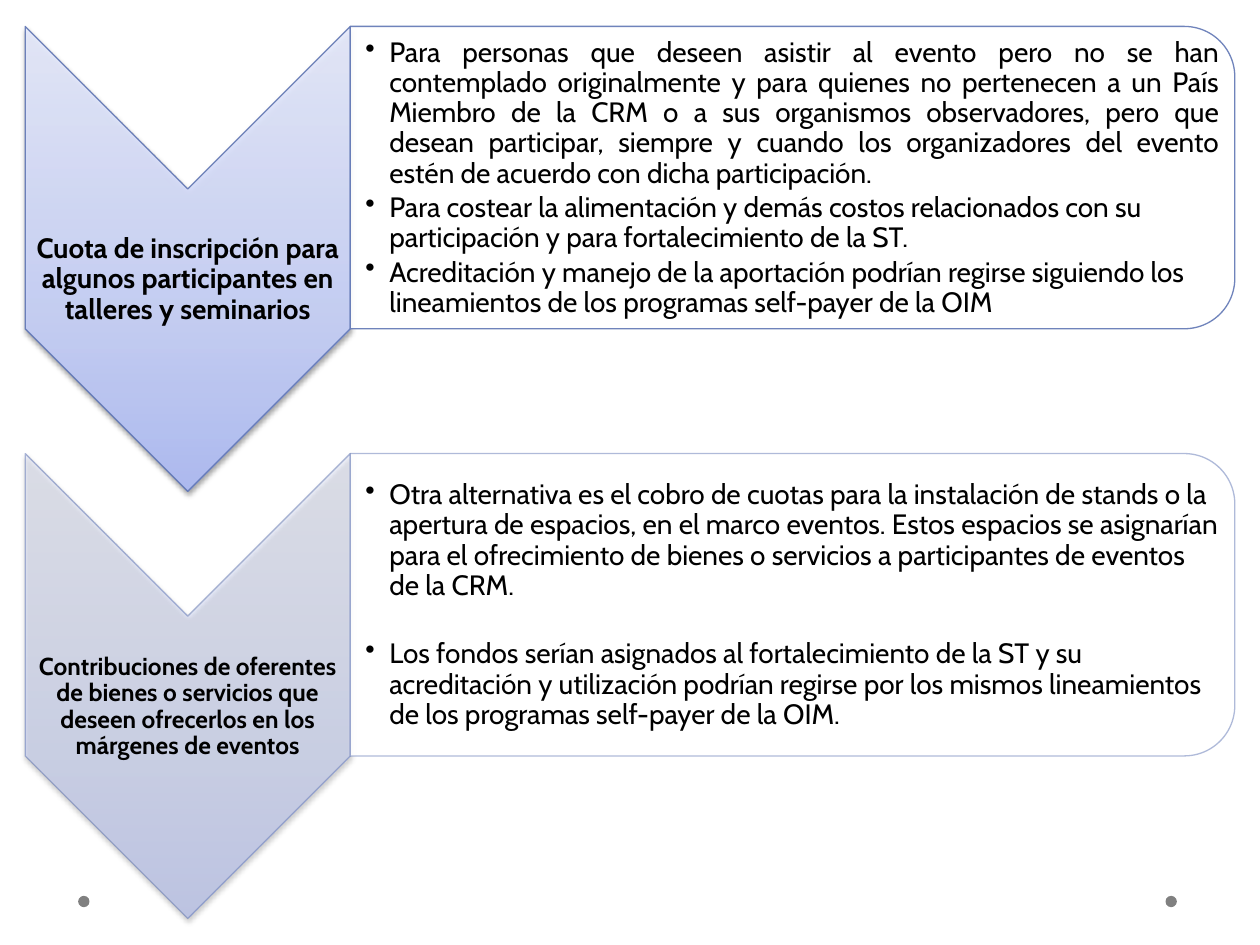
from dataclasses import dataclass

from lxml.etree import SubElement
from pptx import Presentation
from pptx.dml.color import RGBColor
from pptx.enum.shapes import MSO_SHAPE as Shape
from pptx.enum.text import MSO_ANCHOR as Anchor, PP_ALIGN as Align
from pptx.oxml.ns import qn
from pptx.util import Inches, Pt

FONT = "Cabin"
BLACK = RGBColor(0x00, 0x00, 0x00)
WHITE = RGBColor(0xFF, 0xFF, 0xFF)
GRAY = RGBColor(0x80, 0x80, 0x80)
BLUE = RGBColor(0x60, 0x76, 0xB4)
GRADIENT = (
    (0, RGBColor(0xAD, 0xBB, 0xF6)),
    (35, RGBColor(0xC5, 0xCF, 0xF8)),
    (100, RGBColor(0xE8, 0xEC, 0xFD)),
)

# Layout in inches
LEFT, FIRST_TOP, ROW_STEP = 0.2, 0.21, 3.39
CHEVRON_WIDTH, CHEVRON_HEIGHT = 2.58, 3.69
PANEL_WIDTH, PANEL_HEIGHT = 7.02, 2.4
PANEL_LEFT = LEFT + CHEVRON_WIDTH
DOT_SIZE, DOT_TOP = 0.09, 7.11


@dataclass(frozen=True)
class Bullet:
    text: str
    align: Align = Align.LEFT
    space_before: float = 0


@dataclass(frozen=True)
class Row:
    title: str
    title_size: int
    opacity: int
    bullets: tuple[Bullet, ...]


ROWS = (
    Row(
        "Cuota de inscripción para algunos participantes en talleres y seminarios",
        16, 90,
        (
            Bullet(
                "Para personas que deseen asistir al evento pero no se han contemplado "
                "originalmente y para quienes no pertenecen a un País Miembro de la CRM "
                "o a sus organismos observadores, pero que desean participar, siempre y "
                "cuando los organizadores del evento estén de acuerdo con dicha "
                "participación.",
                align=Align.JUSTIFY,
            ),
            Bullet("Para costear la alimentación y demás costos relacionados con su "
                   "participación y para fortalecimiento de la ST."),
            Bullet("Acreditación y manejo de la aportación podrían regirse siguiendo los "
                   "lineamientos de los programas self-payer de la OIM"),
        ),
    ),
    Row(
        "Contribuciones de oferentes de bienes o servicios que deseen ofrecerlos en los "
        "márgenes de eventos",
        14, 50,
        (
            Bullet("Otra alternativa es el cobro de cuotas para la instalación de stands "
                   "o la apertura de espacios, en el marco eventos. Estos espacios se "
                   "asignarían para el ofrecimiento de bienes o servicios a participantes "
                   "de eventos de la CRM."),
            Bullet("Los fondos serían asignados al fortalecimiento de la ST y su "
                   "acreditación y utilización podrían regirse por los mismos "
                   "lineamientos de los programas self-payer de la OIM.",
                   space_before=19.5),
        ),
    ),
)


def set_opacity(color_parent, percent: int) -> None:
    """Make every colour inside an XML element partly transparent."""
    for color in color_parent.iter(qn("a:srgbClr")):
        SubElement(color, qn("a:alpha"), val=str(percent * 1000))


def add_upright_shape(slide, kind: Shape, left: float, top: float,
                      width: float, height: float):
    """Add a shape turned by 90° that fills the given area on the slide."""
    shift = (width - height) / 2
    shape = slide.shapes.add_shape(kind, Inches(left + shift), Inches(top - shift),
                                   Inches(height), Inches(width))
    shape.rotation = 90
    shape.shadow.inherit = False
    shape.line.color.rgb = BLUE
    shape.line.width = Pt(0.75)
    return shape


def add_chevron(slide, top: float, opacity: int) -> None:
    shape = add_upright_shape(slide, Shape.CHEVRON, LEFT, top,
                              CHEVRON_WIDTH, CHEVRON_HEIGHT)
    shape.fill.gradient()
    shape.fill.gradient_angle = 90
    properties = shape.element.spPr

    # Three stops, with a direction that ignores the rotation
    gradient = properties.find(qn("a:gradFill"))
    gradient.set("rotWithShape", "0")
    stops = gradient.find(qn("a:gsLst"))
    for stop in list(stops):
        stops.remove(stop)
    for position, color in GRADIENT:
        stop = SubElement(stops, qn("a:gs"), pos=str(position * 1000))
        SubElement(stop, qn("a:srgbClr"), val=str(color))
    set_opacity(properties, opacity)

    # Soft shadow below
    shadow = SubElement(properties.find(qn("a:effectLst")), qn("a:outerShdw"),
                        blurRad=str(Pt(3.1)), dist=str(Pt(1.6)),
                        dir="5400000", rotWithShape="0")
    SubElement(shadow, qn("a:srgbClr"), val=str(BLACK))
    set_opacity(shadow, 38)


def add_panel(slide, top: float, line_opacity: int) -> None:
    shape = add_upright_shape(slide, Shape.ROUND_2_SAME_RECTANGLE, PANEL_LEFT, top,
                              PANEL_WIDTH, PANEL_HEIGHT)
    shape.fill.solid()
    shape.fill.fore_color.rgb = WHITE
    properties = shape.element.spPr
    set_opacity(properties.find(qn("a:solidFill")), 90)
    set_opacity(properties.find(qn("a:ln")), line_opacity)


def add_text_frame(slide, left: float, top: float, width: float, height: float,
                   *, inset_left: float = 0.01, inset_top: float = 0.01):
    box = slide.shapes.add_textbox(Inches(left), Inches(top),
                                   Inches(width), Inches(height))
    frame = box.text_frame
    frame.word_wrap = True
    frame.vertical_anchor = Anchor.MIDDLE
    frame.margin_left, frame.margin_top = Inches(inset_left), Inches(inset_top)
    frame.margin_right = frame.margin_bottom = Inches(0.01)
    return frame


def write(para, text: str, *, size: int = 16, bold: bool = False,
          align: Align = Align.LEFT, before: float = 0, after: float = 0) -> None:
    para.alignment = align
    para.line_spacing = 0.9
    para.space_before, para.space_after = Pt(before), Pt(after)
    span = para.add_run()
    span.text = text
    span.font.name, span.font.size, span.font.bold = FONT, Pt(size), bold
    span.font.color.rgb = BLACK


def add_bullet_mark(para) -> None:
    properties = para._p.get_or_add_pPr()
    properties.set("marL", str(Inches(0.19)))
    properties.set("indent", str(Inches(-0.19)))
    SubElement(properties, qn("a:buChar"), char="•")


def add_row(slide, row: Row, top: float) -> None:
    add_chevron(slide, top, row.opacity)
    title = add_text_frame(slide, LEFT, top + CHEVRON_WIDTH / 2, CHEVRON_WIDTH, 1.11,
                           inset_top=0.34)
    write(title.paragraphs[0], row.title, size=row.title_size, bold=True,
          align=Align.CENTER)

    add_panel(slide, top, row.opacity)
    body = add_text_frame(slide, PANEL_LEFT, top + 0.12, 6.91, 2.17, inset_left=0.12)
    for index, bullet in enumerate(row.bullets):
        para = body.add_paragraph() if index else body.paragraphs[0]
        write(para, bullet.text, align=bullet.align,
              before=bullet.space_before, after=2.4)
        add_bullet_mark(para)


def add_dot(slide, left: float) -> None:
    dot = slide.shapes.add_shape(Shape.OVAL, Inches(left), Inches(DOT_TOP),
                                 Inches(DOT_SIZE), Inches(DOT_SIZE))
    dot.shadow.inherit = False
    dot.fill.solid()
    dot.fill.fore_color.rgb = GRAY
    dot.line.fill.background()


def main() -> None:
    deck = Presentation()
    deck.slide_width, deck.slide_height = Inches(10), Inches(7.5)
    slide = deck.slides.add_slide(deck.slide_layouts[6])
    for left in (9.25, 0.62):
        add_dot(slide, left)
    for index, row in enumerate(ROWS):
        add_row(slide, row, FIRST_TOP + index * ROW_STEP)
    deck.save("out.pptx")


if __name__ == "__main__":
    main()
